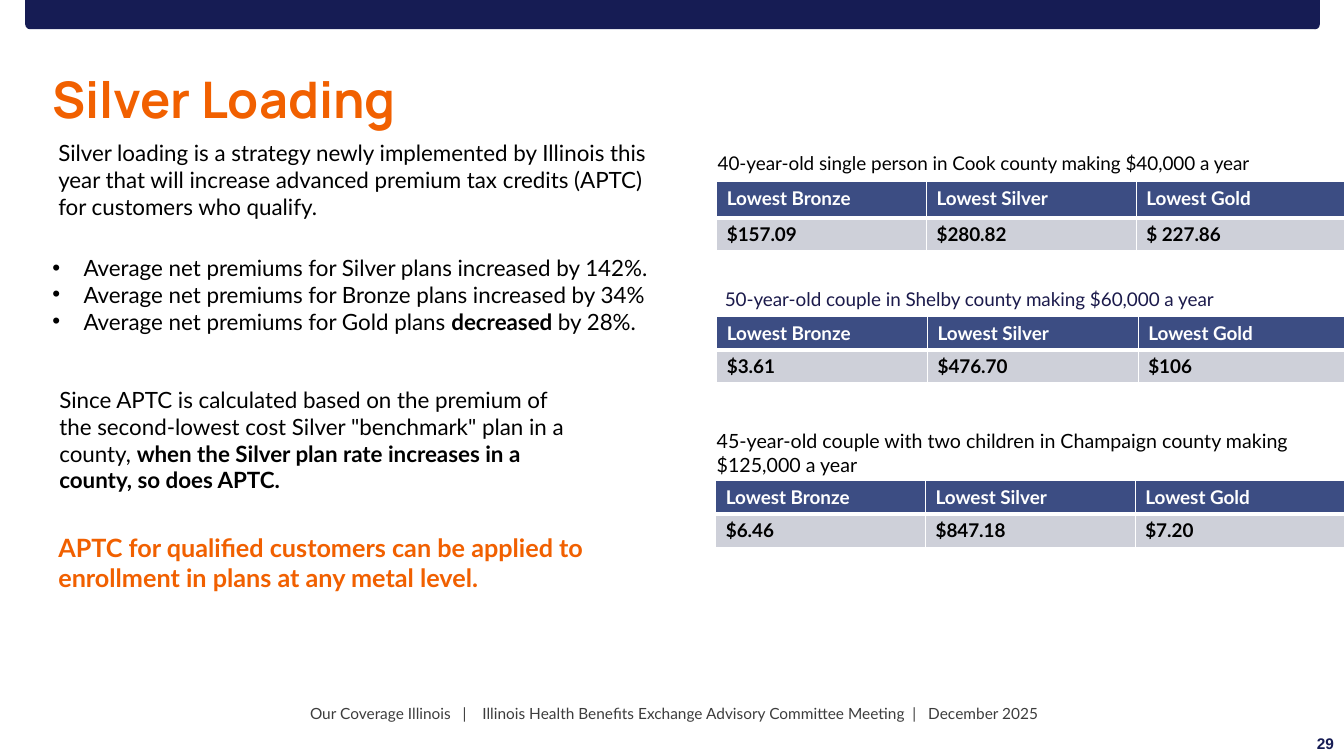
"""Build the Silver Loading slide with premium tables for three households."""
from lxml import etree
from pptx import Presentation
from pptx import util as u
from pptx.dml.color import RGBColor
from pptx.enum import shapes, text
from pptx.oxml import ns

NAVY, ORANGE, BLACK, WHITE = "161C54", "F16000", "000000", "FFFFFF"
HEADER_BLUE, ROW_GREY = "3C4D83", "CED0D9"

deck = Presentation()
deck.slide_width, deck.slide_height = u.Inches(13.33), u.Inches(7.5)
page = deck.slides.add_slide(deck.slide_layouts[6])


def colour(value):
    return RGBColor.from_string(value)


def add_text(place, paragraphs, size, ink, font="Lato", bold=False, align=text.PP_ALIGN.LEFT):
    """Each paragraph is a list of pieces; every second piece is bold."""
    box = page.shapes.add_textbox(*map(u.Inches, place))
    frame = box.text_frame
    frame.word_wrap = True
    for index, pieces in enumerate(paragraphs):
        para = frame.paragraphs[0] if index == 0 else frame.add_paragraph()
        para.alignment = align
        para.font.size, para.font.name = u.Pt(size), font
        para.font.bold, para.font.color.rgb = bold, colour(ink)
        for order, piece in enumerate(pieces):
            span = para.add_run()
            span.text = piece
            if order % 2:
                span.font.bold = True
    return frame


bars = [
    (shapes.MSO_SHAPE.RECTANGLE, (12.96, 7.19, 0.37, 0.31), WHITE, 0),
    (shapes.MSO_SHAPE.ROUND_2_SAME_RECTANGLE, (0.25, 0, 12.84, 0.29), NAVY, 180),
]
for preset, place, fill, turn in bars:
    bar = page.shapes.add_shape(preset, *map(u.Inches, place))
    bar.shadow.inherit = False
    bar.fill.solid()
    bar.fill.fore_color.rgb = colour(fill)
    bar.line.fill.background()
    bar.rotation = turn

number = add_text((11, 7.23, 2.33, 0.29), [["29"]], 11, NAVY, "Arial", True, text.PP_ALIGN.RIGHT)
number.vertical_anchor = text.MSO_ANCHOR.MIDDLE

add_text((0.42, 0.63, 6.67, 0.71), [["Silver Loading"]], 36, ORANGE, "Manrope", True)
add_text((0.48, 1.33, 6.24, 0.91), [[
    "Silver loading is a strategy newly implemented by Illinois this year that will increase "
    "advanced premium tax credits (APTC) for customers who qualify."]], 16, BLACK)

premiums = add_text((0.42, 2.47, 6.28, 1.18), [
    ["Average net premiums for Silver plans increased by 142%."],
    ["Average net premiums for Bronze plans increased by 34%"],
    ["Average net premiums for Gold plans ", "decreased ", "by 28%."],
], 16, BLACK)
for para in premiums.paragraphs:
    props = para._p.get_or_add_pPr()
    props.set("marL", str(u.Inches(0.31)))
    props.set("indent", str(u.Inches(-0.31)))
    bullet_font = etree.Element(ns.qn("a:buFont"), typeface="Arial")
    bullet = etree.Element(ns.qn("a:buChar"), char="•")
    props.insert(0, bullet_font)
    props.insert(1, bullet)

add_text((0.49, 3.78, 5.32, 1.48), [[
    "Since APTC is calculated based on the premium of the second-lowest cost Silver "
    "\"benchmark\" plan in a county, ",
    "when the Silver plan rate increases in a county, so does APTC."]], 16, BLACK)
add_text((0.48, 5.23, 5.92, 1.01), [[
    "APTC for qualified customers can be applied to enrollment in plans at any metal level."]],
    18, ORANGE, bold=True)

headings = ["Lowest Bronze", "Lowest Silver", "Lowest Gold"]
households = [
    ("40-year-old single person in Cook county making $40,000 a year",
     (7.02, 1.46, 6.86, 0.34), 13.5, BLACK,
     (7.11, 1.8), 2.08, (0.36, 0.33), ["$157.09", "$280.82", "$ 227.86"]),
    ("50-year-old couple in Shelby county making $60,000 a year",
     (7.09, 2.8, 6.86, 0.34), 13.5, "1B1A4B",
     (7.11, 3.14), 2.09, (0.33, 0.32), ["$3.61", "$476.70", "$106"]),
    ("45-year-old couple with two children in Champaign county making $125,000 a year",
     (7.01, 4.21, 6.36, 0.57), 14, BLACK,
     (7.1, 4.77), 2.08, (0.33, 0.33), ["$6.46", "$847.18", "$7.20"]),
]
for caption, place, size, ink, corner, column_width, row_heights, prices in households:
    add_text(place, [[caption]], size, ink)
    extent = (3 * column_width, sum(row_heights))
    table = page.shapes.add_table(2, 3, *map(u.Inches, corner + extent)).table
    for column in table.columns:
        column.width = u.Inches(column_width)
    styles = [(headings, HEADER_BLUE, WHITE, "lnB"), (prices, ROW_GREY, BLACK, "lnT")]
    for row, (words, fill, letter, thick_edge) in enumerate(styles):
        table.rows[row].height = u.Inches(row_heights[row])
        for col, word in enumerate(words):
            cell = table.cell(row, col)
            cell.text = word
            font = cell.text_frame.paragraphs[0].font
            font.size, font.name, font.bold = u.Pt(13.5), "Lato", True
            font.color.rgb = colour(letter)
            cell.fill.solid()
            cell.fill.fore_color.rgb = colour(fill)
            props = cell._tc.get_or_add_tcPr()
            for order, edge in enumerate(["lnL", "lnR", "lnT", "lnB"]):
                weight = u.Pt(3 if edge == thick_edge else 1)
                border = etree.Element(ns.qn("a:" + edge), w=str(weight))
                paint = etree.SubElement(border, ns.qn("a:solidFill"))
                etree.SubElement(paint, ns.qn("a:srgbClr"), val=WHITE)
                props.insert(order, border)

add_text((2.77, 6.94, 7.84, 0.29), [[
    "Our Coverage Illinois   |    Illinois Health Benefits Exchange Advisory Committee Meeting  "
    "|   December 2025"]], 11, "3D3D3D", align=text.PP_ALIGN.CENTER)

deck.save("out.pptx")
